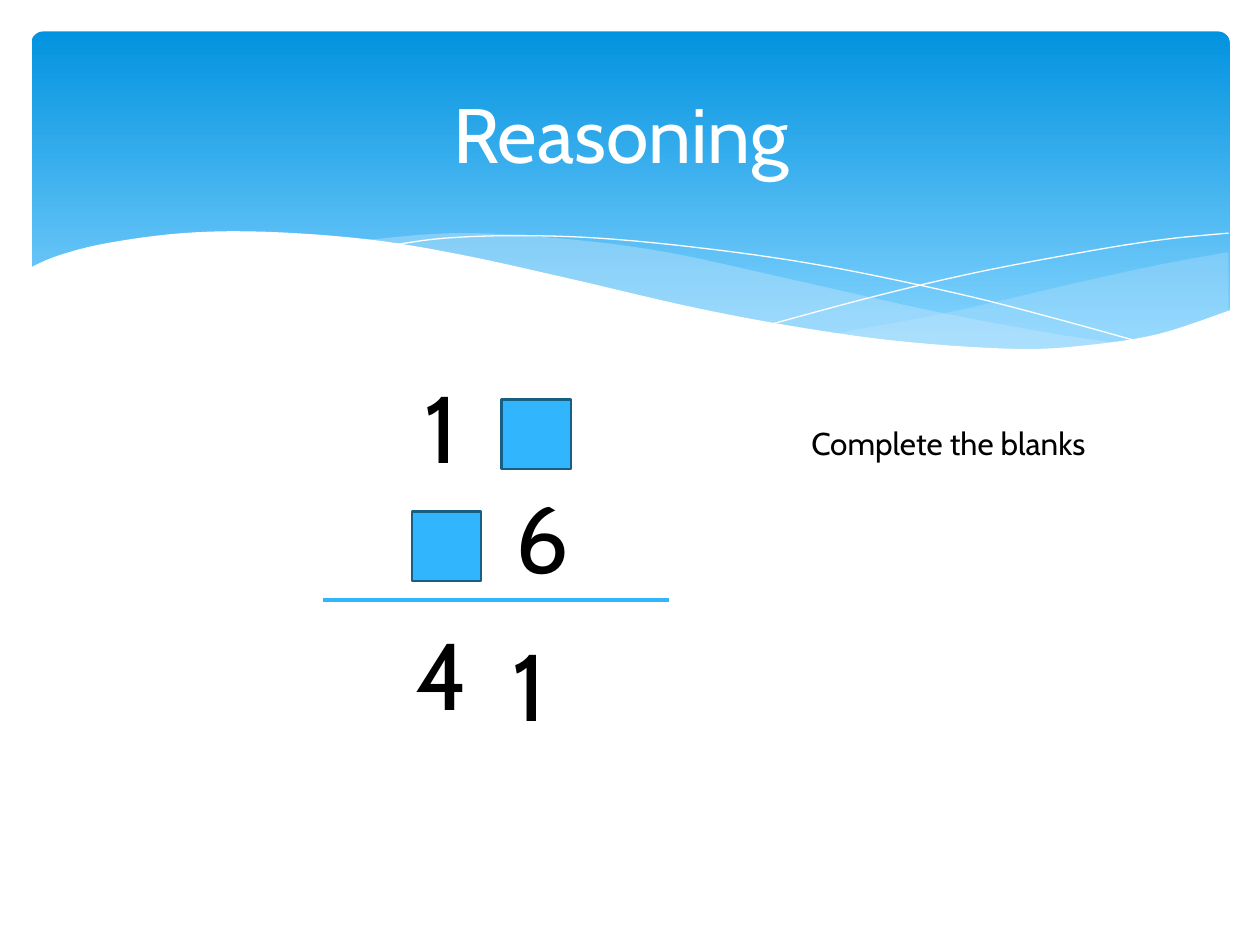
import pptx
import pptx.util
import pptx.dml.color
import pptx.enum.shapes
import pptx.enum.text
import pptx.oxml.ns
import lxml.etree

Inches = pptx.util.Inches
Pt = pptx.util.Pt
FONT = "Cabin"
COLORS = {"deep": "0293E0", "light": "83D3FE", "veil": "C6E7FC", "white": "FFFFFF",
          "black": "000000", "blue": "31B6FD", "edge": "195F84"}

VEIL_RIGHT = [
    [(9.5, 1.75), (8.96, 1.85), (8.36, 1.98), (7.28, 2.23), (6.36, 2.4)],
    [(6.36, 2.4), (6.94, 2.47), (7.56, 2.52), (8.19, 2.52), (8.8, 2.44), (9.24, 2.32),
     (9.5, 2.22)]]
VEIL_MAIN = [
    [(2.61, 1.66), (3.36, 1.6), (4.17, 1.64), (5.03, 1.75), (6.04, 1.97), (7.16, 2.22),
     (8.12, 2.4), (8.68, 2.48)],
    [(8.68, 2.48), (8.23, 2.52), (7.71, 2.53), (6.97, 2.49), (6.09, 2.36), (5.05, 2.15),
     (4.24, 1.97), (3.37, 1.78), (2.61, 1.66)]]
LINE_DOWN = [[(2.84, 1.7), (3.28, 1.64), (3.91, 1.62), (4.64, 1.65), (5.57, 1.75),
              (6.4, 1.88), (7.35, 2.08), (8.06, 2.26), (8.82, 2.47)]]
LINE_UP = [[(5.88, 2.32), (6.7, 2.1), (7.51, 1.91), (8.41, 1.74), (8.99, 1.65), (9.5, 1.6)]]
FRONT = [
    [(9.52, 2.21), (8.95, 2.4), (8.38, 2.49), (7.84, 2.52), (7.01, 2.47), (6.23, 2.37),
     (5.3, 2.2), (4.22, 1.95), (3.4, 1.77), (2.67, 1.65), (1.86, 1.59), (1.21, 1.6),
     (0.6, 1.68), (0.21, 1.78), (-0.02, 1.88)],
    [(-0.02, 3.04), (9.52, 3.04)]]


def color(name):
    """Return the named colour."""
    return pptx.dml.color.RGBColor.from_string(COLORS[name])


def smooth(knots, steps=6):
    """Return points of a Catmull-Rom curve through the knots."""
    pts = [knots[0]] + knots + [knots[-1]]
    out = [knots[0]]
    for a, b, c, d in zip(pts, pts[1:], pts[2:], pts[3:]):
        for n in range(1, steps + 1):
            t = n / steps
            out.append(tuple(
                0.5 * (2 * q + (r - p) * t + (2 * p - 5 * q + 4 * r - s) * t ** 2
                       + (3 * q - p - 3 * r + s) * t ** 3)
                for p, q, r, s in zip(a, b, c, d)))
    return out


def wave(slide, box, curves, fill=None, alpha=100):
    """Draw a filled wave, or a thin white line when no fill is given."""
    left, top = box[:2]
    pts = [(Inches(left + x), Inches(top + y)) for curve in curves for x, y in smooth(curve)]
    build = slide.shapes.build_freeform(*pts[0])
    build.add_line_segments(pts[1:], close=fill is not None)
    shape = build.convert_to_shape()
    shape.shadow.inherit = False
    if fill is None:
        shape.fill.background()
        shape.line.color.rgb = color("white")
        shape.line.width = Pt(0)
        return
    shape.line.fill.background()
    shape.fill.solid()
    shape.fill.fore_color.rgb = color(fill)
    if alpha < 100:
        tone = shape.element.spPr.find(".//" + pptx.oxml.ns.qn("a:srgbClr"))
        lxml.etree.SubElement(tone, pptx.oxml.ns.qn("a:alpha"), val=str(alpha * 1000))


def banner(slide, box):
    """Draw the gradient banner and its waves."""
    panel = slide.shapes.add_shape(pptx.enum.shapes.MSO_SHAPE.ROUNDED_RECTANGLE,
                                   *map(Inches, box))
    panel.adjustments[0] = 0.034
    panel.shadow.inherit = False
    panel.line.fill.background()
    panel.fill.gradient()
    panel.fill.gradient_angle = 270
    stops = zip(panel.fill.gradient_stops, ("deep", "light"), (0, 0.9))
    for stop, name, place in stops:
        stop.color.rgb = color(name)
        stop.position = place
    wave(slide, box, VEIL_RIGHT, "veil", 29)
    wave(slide, box, VEIL_MAIN, "veil", 40)
    wave(slide, box, LINE_DOWN)
    wave(slide, box, LINE_UP)
    wave(slide, box, FRONT, "white")


def write(para, text, size, name):
    """Add one run to a paragraph."""
    run = para.add_run()
    run.text = text
    run.font.size = Pt(size)
    run.font.name = FONT
    run.font.color.rgb = color(name)


def head(slide, box, text):
    """Place the title in front of the banner."""
    title = slide.shapes.title
    title.left, title.top, title.width, title.height = map(Inches, box)
    title.element.getparent().append(title.element)
    frame = title.text_frame
    frame.vertical_anchor = pptx.enum.text.MSO_ANCHOR.MIDDLE
    para = frame.paragraphs[0]
    para.alignment = pptx.enum.text.PP_ALIGN.CENTER
    write(para, text, 44, "white")


def label(slide, box, text, size, wrap=True):
    """Add a black text box."""
    frame = slide.shapes.add_textbox(*map(Inches, box)).text_frame
    frame.word_wrap = wrap
    frame.auto_size = pptx.enum.text.MSO_AUTO_SIZE.SHAPE_TO_FIT_TEXT
    write(frame.paragraphs[0], text, size, "black")


def blank(slide, box):
    """Add a blue square for a missing digit."""
    shape = slide.shapes.add_shape(pptx.enum.shapes.MSO_SHAPE.RECTANGLE, *map(Inches, box))
    shape.shadow.inherit = False
    shape.fill.solid()
    shape.fill.fore_color.rgb = color("blue")
    shape.line.color.rgb = color("edge")
    shape.line.width = Pt(1.25)


def sums(slide, box):
    """Lay out the column sum with its digits, blanks and rule."""
    left, top, width, _ = box
    for text, x, y in (("1", 0.71, 0), ("6", 1.43, 0.87), ("1", 1.41, 2.05), ("4", 0.64, 1.96)):
        label(slide, (left + x, top + y, 0.71, 1.01), text, 54)
    for x, y in ((0.71, 1.18), (1.42, 0.29)):
        blank(slide, (left + x, top + y, 0.55, 0.55))
    level = Inches(top + 1.88)
    rule = slide.shapes.add_connector(pptx.enum.shapes.MSO_CONNECTOR.STRAIGHT,
                                      Inches(left), level, Inches(left + width), level)
    rule.line.color.rgb = color("blue")
    rule.line.width = Pt(2.5)
    lxml.etree.SubElement(rule.element.spPr, pptx.oxml.ns.qn("a:effectLst"))


def main():
    """Build and save the slide."""
    deck = pptx.Presentation()
    deck.slide_width, deck.slide_height = Inches(10), Inches(7.5)
    slide = deck.slides.add_slide(deck.slide_layouts[5])
    banner(slide, (0.25, 0.25, 9.51, 2.7))
    head(slide, (0.5, 0.37, 9, 1.37), "Reasoning ")
    sums(slide, (2.56, 2.88, 2.75, 3.06))
    label(slide, (6.34, 3.32, 2.39, 0.4), "Complete the blanks", 18, wrap=False)
    deck.save("out.pptx")


if __name__ == "__main__":
    main()
